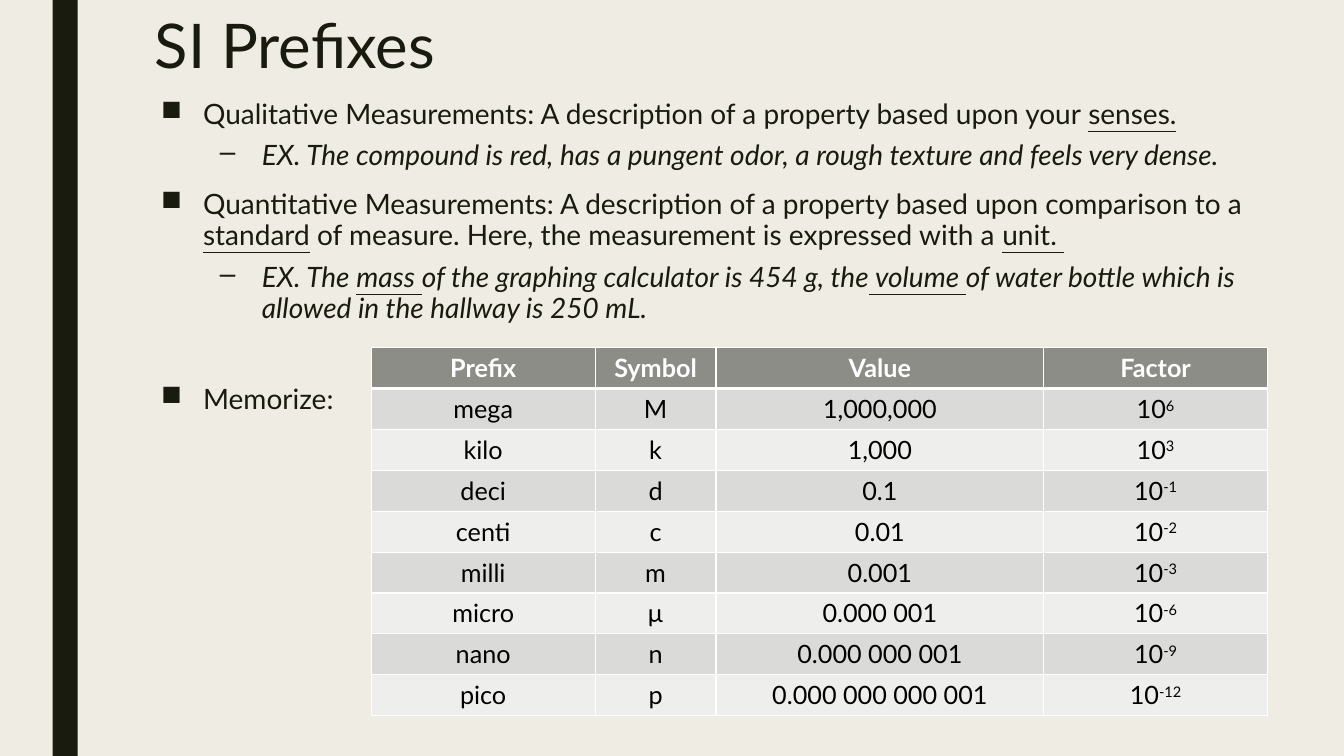
from lxml.etree import SubElement as Sub
from pptx import Presentation
from pptx.dml.color import RGBColor
from pptx.enum.shapes import MSO_SHAPE as Kind
from pptx.enum.text import MSO_ANCHOR as Anchor, MSO_AUTO_SIZE as Fit, PP_ALIGN as Align
from pptx.oxml.ns import qn
from pptx.util import Inches, Pt

# Grid: 160 columns by 90 rows, twelve to the inch
COLS, ROWS = 160, 90
UNIT = Inches(1) / 12

INK = RGBColor(0x19, 0x1B, 0x0E)
PAPER = RGBColor(0xEF, 0xED, 0xE3)
HEAD = RGBColor(0x8C, 0x8D, 0x86)
DARK = RGBColor(0xDA, 0xDB, 0xD9)
PALE = RGBColor(0xEE, 0xEE, 0xED)
WHITE = RGBColor(0xFF, 0xFF, 0xFF)
BLACK = RGBColor(0, 0, 0)

# Text formats
TITLE = {"name": "Lato", "size": Pt(44), "bold": False}
MAIN = {"name": "Lato", "size": Pt(20), "italic": False}
SUB = MAIN | {"italic": True}
LABEL = {"name": "Lato", "size": Pt(18), "bold": True}
CELL = LABEL | {"bold": False}

# Bullet levels: mark, left indent in grid units, run format
LEVELS = [("■", 5, MAIN), ("–", 12, SUB)]

# Level, space before, text; underscores enclose underlined words
NOTES = [
    (0, 10, "Qualitative Measurements: A description of a property based "
            "upon your _senses._"),
    (1, 5, "EX. The compound is red, has a pungent odor, a rough texture "
           "and feels very dense."),
    (0, 10, "Quantitative Measurements: A description of a property based "
            "upon comparison to a _standard_ of measure. Here, the "
            "measurement is expressed with a _unit. _"),
    (1, 5, "EX. The _mass _of the graphing calculator is 454 g, the_ volume _"
           "of water bottle which is allowed in the hallway is 250 mL."),
    (0, 40, "Memorize:"),
]

# Prefix, symbol, value, power of ten
NAMES = ("Prefix", "Symbol", "Value", "Factor")
UNITS = [
    ("mega", "M", "1,000,000", 6),
    ("kilo", "k", "1,000", 3),
    ("deci", "d", "0.1", -1),
    ("centi", "c", "0.01", -2),
    ("milli", "m", "0.001", -3),
    ("micro", "µ", "0.000 001", -6),
    ("nano", "n", "0.000 000 001", -9),
    ("pico", "p", "0.000 000 000 001", -12),
]
WIDTHS = (26.65, 14.4, 39, 26.65)
HEIGHT = 4.87


def grid(*cells):
    return [round(n * UNIT) for n in cells]


def style(item, form):
    for key, value in form.items():
        setattr(item, key, value)


def write(para, text, form, color):
    run = para.add_run()
    run.text = text
    style(run.font, form)
    run.font.color.rgb = color
    return run


def add_bar(slide):
    bar = slide.shapes.add_shape(Kind.RECTANGLE, *grid(6.25, 0, 3, ROWS))
    bar.shadow.inherit = False
    bar.fill.solid()
    bar.fill.fore_color.rgb = INK
    bar.line.fill.background()


def add_title(slide, text):
    title = slide.shapes.title
    spots = grid(17.25, 1.3, 126, 19.5)
    style(title, dict(zip(("left", "top", "width", "height"), spots)))
    frame = title.text_frame
    style(frame, {"vertical_anchor": Anchor.TOP, "auto_size": Fit.NONE})
    para = frame.paragraphs[0]
    style(para, {"alignment": Align.LEFT, "line_spacing": 0.89})
    write(para, text, TITLE, INK)


def add_notes(slide):
    box = slide.shapes.add_textbox(*grid(18, 11.2, 139.2, 82.8))
    frame = box.text_frame
    style(frame, {"word_wrap": True, "vertical_anchor": Anchor.TOP})
    for i, (level, gap, text) in enumerate(NOTES):
        para = frame.add_paragraph() if i else frame.paragraphs[0]
        mark, indent, form = LEVELS[level]
        style(para, {"level": level, "line_spacing": 0.94,
                     "space_before": Pt(gap), "space_after": Pt(2)})
        props = para._p.get_or_add_pPr()
        left, hang = grid(indent, -5)
        props.set("marL", str(left))
        props.set("indent", str(hang))
        Sub(props, qn("a:buChar")).set("char", mark)
        for k, part in enumerate(text.split("_")):
            if part:
                write(para, part, form | {"underline": k % 2 == 1}, INK)


def add_edges(cell, top, base):
    props = cell._tc.get_or_add_tcPr()
    for side, width in zip("LRTB", (1, 1, top, base)):
        line = Sub(props, qn(f"a:ln{side}"), w=str(Pt(width)))
        fill = Sub(line, qn("a:solidFill"))
        Sub(fill, qn("a:srgbClr"), val=str(WHITE))


def fill_cell(cell, text, form, color, back):
    cell.fill.solid()
    cell.fill.fore_color.rgb = back
    para = cell.text_frame.paragraphs[0]
    para.alignment = Align.CENTER
    if isinstance(text, int):
        write(para, "10", form, color)
        power = write(para, str(text), form, color)
        power._r.get_or_add_rPr().set("baseline", "30000")
    else:
        write(para, text, form, color)


def add_table(slide):
    rows = [NAMES, *UNITS]
    spots = grid(44.2, 41.4, sum(WIDTHS), HEIGHT * len(rows))
    table = slide.shapes.add_table(len(rows), len(NAMES), *spots).table
    for col, width in zip(table.columns, grid(*WIDTHS)):
        col.width = width
    for r, row in enumerate(rows):
        table.rows[r].height = grid(HEIGHT)[0]
        back = DARK if r % 2 else PALE
        look = (CELL, BLACK, back) if r else (LABEL, WHITE, HEAD)
        for c, text in enumerate(row):
            cell = table.cell(r, c)
            # A thick rule parts the header from the units
            add_edges(cell, 3 if r == 1 else 1, 1 if r else 3)
            fill_cell(cell, text, *look)


def main():
    deck = Presentation()
    deck.slide_width, deck.slide_height = grid(COLS, ROWS)
    slide = deck.slides.add_slide(deck.slide_layouts[5])
    slide.background.fill.solid()
    slide.background.fill.fore_color.rgb = PAPER
    add_bar(slide)
    add_title(slide, "SI Prefixes")
    add_notes(slide)
    add_table(slide)
    deck.save("out.pptx")


if __name__ == "__main__":
    main()
